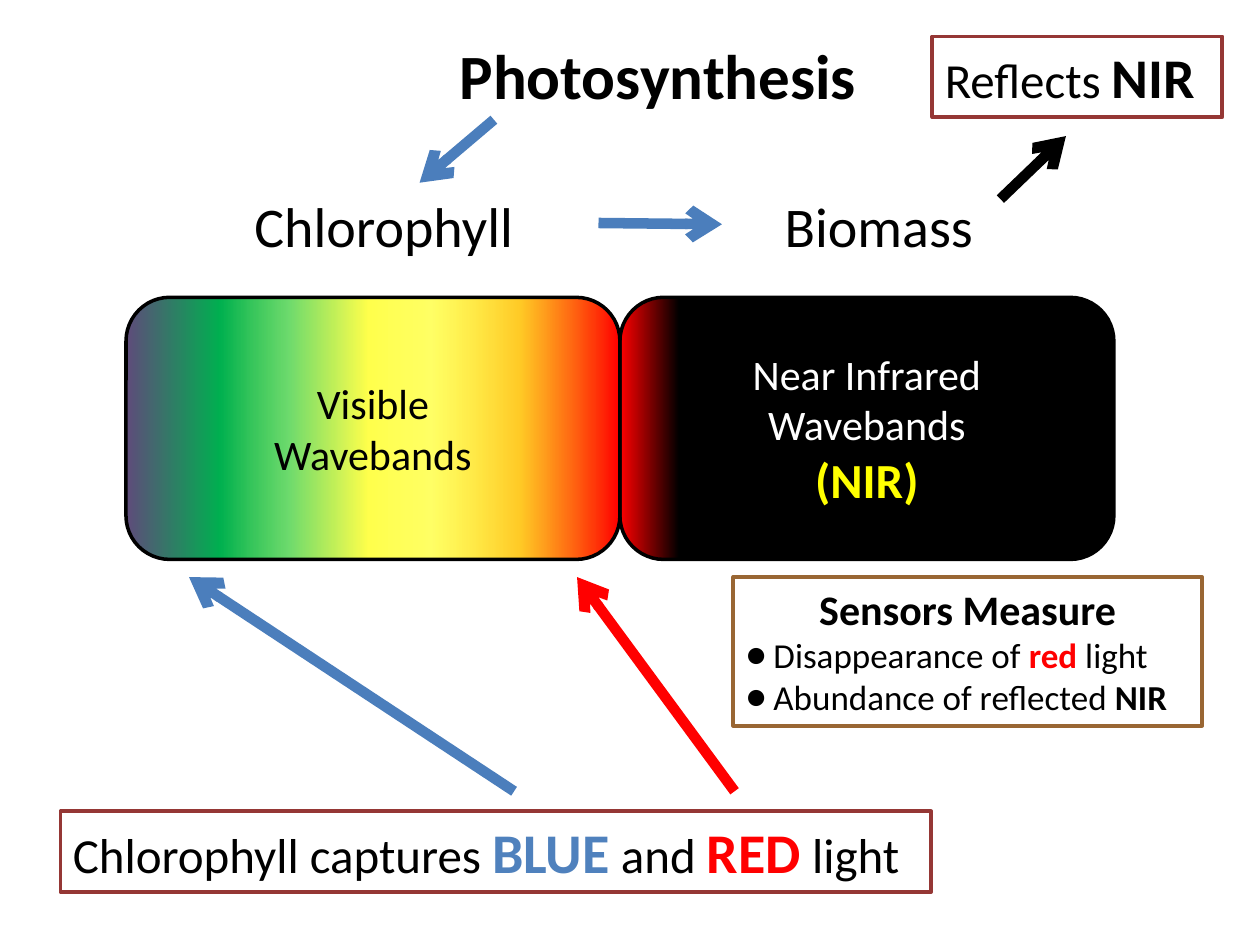
import pptx
import pptx.util
import pptx.dml.color
import pptx.enum.shapes
import pptx.enum.text
import pptx.oxml.ns
from lxml import etree

Inches = pptx.util.Inches
Pt = pptx.util.Pt
SHAPE = pptx.enum.shapes.MSO_SHAPE
ALIGN = pptx.enum.text.PP_ALIGN
ANCHOR = pptx.enum.text.MSO_ANCHOR
qn = pptx.oxml.ns.qn

FONT = "Calibri"
COLORS = {
    "black": "000000",
    "white": "FFFFFF",
    "yellow": "FFFF00",
    "red": "FF0000",
    "blue": "4F81BD",
    "arrow": "4B7EBC",
    "maroon": "953735",
    "brown": "996633",
    "orange": "FFC000",
    "lime": "33CC33",
    "green": "00B050",
    "violet": "604A7B",
}
VISIBLE_STOPS = [
    (0, "red", 100), (20, "orange", 85), (38, "yellow", 60), (51, "yellow", 70),
    (67, "lime", 71), (81, "green", 100), (100, "violet", 100),
]
INFRARED_STOPS = [(0, "red", 100), (12, "black", 100), (100, "black", 100)]


def rgb(color):
    return pptx.dml.color.RGBColor.from_string(COLORS[color])


def run(text, size, color="black", bold=False):
    return text, size, color, bold


def write(shape, paragraphs, align=ALIGN.LEFT, anchor=ANCHOR.TOP):
    frame = shape.text_frame
    frame.word_wrap = True
    frame.vertical_anchor = anchor
    for index, runs in enumerate(paragraphs):
        paragraph = frame.paragraphs[0] if index == 0 else frame.add_paragraph()
        paragraph.alignment = align
        for text, size, color, bold in runs:
            part = paragraph.add_run()
            part.text = text
            part.font.name = FONT
            part.font.size = Pt(size)
            part.font.bold = bold
            part.font.color.rgb = rgb(color)


def add_label(slide, left, top, width, height, runs):
    label = slide.shapes.add_textbox(Inches(left), Inches(top), Inches(width), Inches(height))
    write(label, [runs])


def add_panel(slide, box, preset, outline, weight):
    panel = slide.shapes.add_shape(preset, *[Inches(length) for length in box])
    panel.shadow.inherit = False
    panel.fill.background()
    panel.line.color.rgb = rgb(outline)
    panel.line.width = Pt(weight)
    return panel


def add_arrow(slide, start, end, color="arrow"):
    arrow = slide.shapes.add_connector(
        pptx.enum.shapes.MSO_CONNECTOR.STRAIGHT,
        *[Inches(length) for length in (*start, *end)])
    arrow.line.color.rgb = rgb(color)
    arrow.line.width = Pt(6)
    properties = arrow.element.spPr
    etree.SubElement(properties.find(qn("a:ln")), qn("a:tailEnd"), type="arrow")
    etree.SubElement(properties, qn("a:effectLst"))


def paint_gradient(shape, stops, angle):
    shape.fill.gradient()
    shape.fill.gradient_angle = angle
    stop_list = shape.element.spPr.find(".//" + qn("a:gsLst"))
    for old_stop in list(stop_list):
        stop_list.remove(old_stop)
    for position, color, opacity in stops:
        stop = etree.SubElement(stop_list, qn("a:gs"), pos=str(position * 1000))
        tint = etree.SubElement(stop, qn("a:srgbClr"), val=COLORS[color])
        if opacity < 100:
            etree.SubElement(tint, qn("a:alpha"), val=str(opacity * 1000))


def add_bullet(paragraph):
    properties = paragraph._p.get_or_add_pPr()
    indent = Inches(0.22)
    properties.set("marL", str(indent))
    properties.set("indent", str(-indent))
    etree.SubElement(properties, qn("a:buFont"), typeface=FONT)
    etree.SubElement(properties, qn("a:buChar"), char="●")


def add_process(slide, box):
    left, top, width, height = box
    add_label(slide, left + 1.63, top, 3.38, 0.71, [run("Photosynthesis", 36, bold=True)])
    add_arrow(slide, (left + 2, top + 0.71), (left + 1.41, top + 1.21))
    word_top = top + height - 0.64
    add_label(slide, left, word_top, 2.38, 0.64, [run("Chlorophyll", 32)])
    add_arrow(slide, (left + 2.83, word_top + 0.3), (left + 3.81, word_top + 0.31))
    add_label(slide, left + width - 1.74, word_top, 1.74, 0.64, [run("Biomass", 32)])


def add_spectrum(slide, box):
    left, top, width, height = box
    half = width / 2
    bands = [
        (left + half, INFRARED_STOPS, 0,
         [[run("Near Infrared", 24, "white")],
          [run("Wavebands", 24, "white")],
          [run("(NIR)", 28, "yellow", True)]]),
        (left, VISIBLE_STOPS, 180,
         [[run("Visible", 24)], [run("Wavebands", 24)]]),
    ]
    for band_left, stops, angle, paragraphs in bands:
        band = add_panel(slide, (band_left, top, half, height),
                         SHAPE.ROUNDED_RECTANGLE, "black", 2)
        paint_gradient(band, stops, angle)
        write(band, paragraphs, ALIGN.CENTER, ANCHOR.MIDDLE)


def add_absorption(slide, box):
    left, top, width, height = box
    caption_height = 0.64
    caption_top = top + height - caption_height
    caption = add_panel(slide, (left, caption_top, width, caption_height),
                        SHAPE.RECTANGLE, "maroon", 2.25)
    write(caption, [[
        run("Chlorophyll captures ", 28), run("BLUE", 32, "blue", True),
        run(" and ", 28), run("RED", 32, "red", True), run(" light", 28),
    ]])
    for start, end, color in [(3.6, 1.02, "arrow"), (5.35, 4.1, "red")]:
        add_arrow(slide, (left + start, caption_top - 0.16), (left + end, top), color)


def add_reflection(slide, box):
    left, top, width, height = box
    caption = add_panel(slide, (left, top, width, 0.64), SHAPE.RECTANGLE, "maroon", 2.25)
    write(caption, [[run("Reflects ", 28), run("NIR", 32, bold=True)]])
    add_arrow(slide, (left + 0.54, top + height), (left + 1.06, top + 0.79), "black")


def add_sensors(slide, box):
    sensors = add_panel(slide, box, SHAPE.RECTANGLE, "brown", 2.25)
    write(sensors, [
        [run("Sensors Measure", 24, bold=True)],
        [run("Disappearance of ", 20), run("red", 20, "red", True), run(" light", 20)],
        [run("Abundance of reflected ", 20), run("NIR", 20, bold=True)],
    ])
    heading, *measures = sensors.text_frame.paragraphs
    heading.alignment = ALIGN.CENTER
    for measure in measures:
        add_bullet(measure)


def main():
    deck = pptx.Presentation()
    deck.slide_width = Inches(10)
    deck.slide_height = Inches(7.5)
    slide = deck.slides.add_slide(deck.slide_layouts[6])
    add_process(slide, (1.92, 0.24, 5.95, 1.87))
    add_absorption(slide, (0.48, 4.58, 6.91, 2.5))
    add_sensors(slide, (5.82, 4.58, 3.72, 1.18))
    add_reflection(slide, (7.4, 0.29, 2.3, 1.29))
    add_spectrum(slide, (1, 2.36, 7.84, 2.08))
    deck.save("out.pptx")


if __name__ == "__main__":
    main()
